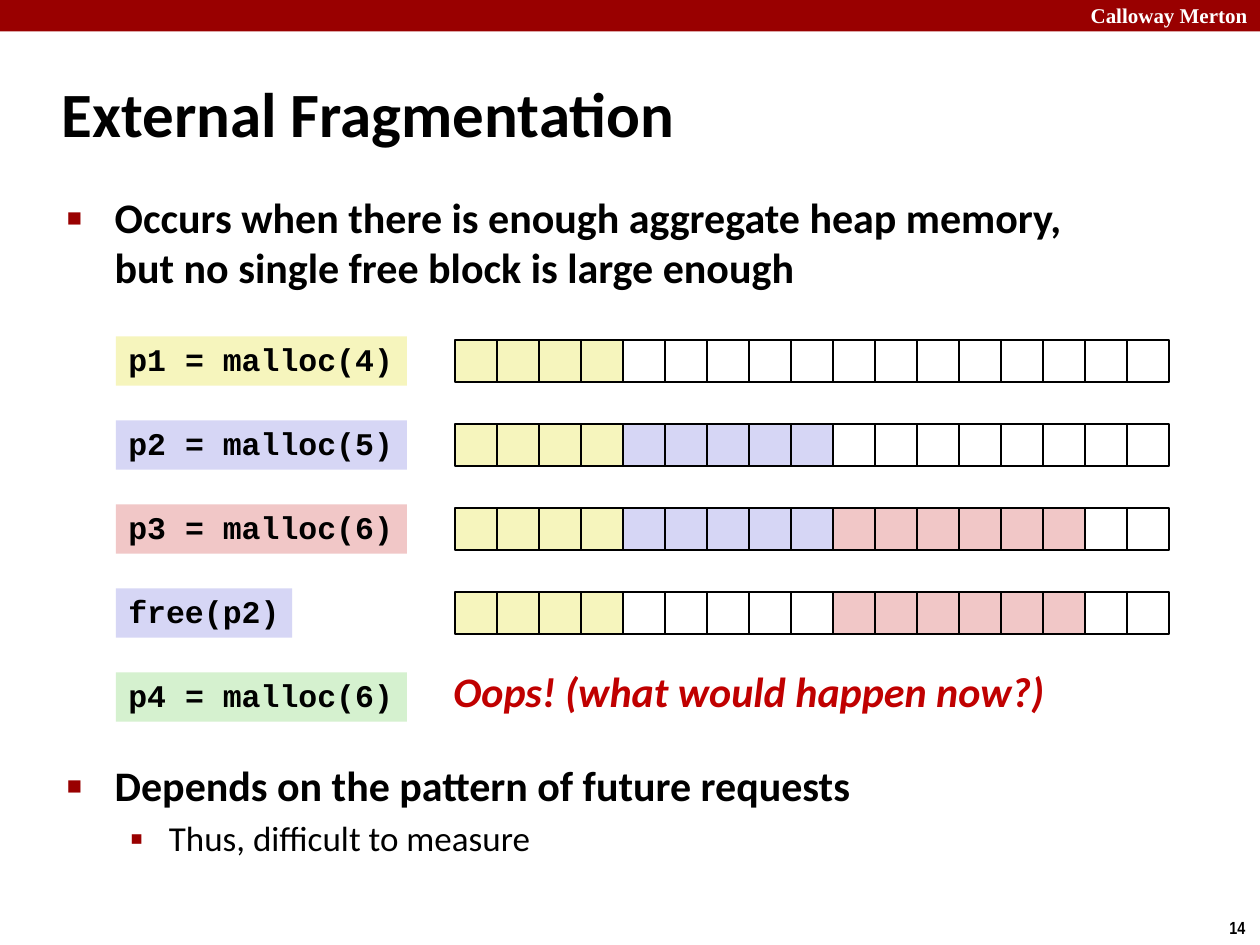
from lxml import etree
from pptx import Presentation
from pptx.dml.color import RGBColor
from pptx.enum.shapes import MSO_SHAPE
from pptx.enum.text import MSO_ANCHOR, MSO_AUTO_SIZE, PP_ALIGN
from pptx.oxml.ns import qn
from pptx.util import Inches, Pt

RECTANGLE = MSO_SHAPE.RECTANGLE
LEFT, RIGHT = PP_ALIGN.LEFT, PP_ALIGN.RIGHT
TOP, MIDDLE = MSO_ANCHOR.TOP, MSO_ANCHOR.MIDDLE
NO_AUTOFIT = MSO_AUTO_SIZE.NONE

BLACK = RGBColor(0x00, 0x00, 0x00)
WHITE = RGBColor(0xFF, 0xFF, 0xFF)
DARK_RED = RGBColor(0x99, 0x00, 0x00)
ALERT_RED = RGBColor(0xC0, 0x00, 0x00)
YELLOW = RGBColor(0xF6, 0xF5, 0xBD)
BLUE = RGBColor(0xD6, 0xD6, 0xF5)
PINK = RGBColor(0xF1, 0xC7, 0xC7)
GREEN = RGBColor(0xD5, 0xF1, 0xCF)


def add_rectangle(shapes, left, top, width, height, fill, outlined=False):
    box = shapes.add_shape(RECTANGLE, Inches(left), Inches(top),
                           Inches(width), Inches(height))
    box.shadow.inherit = False
    box.fill.solid()
    box.fill.fore_color.rgb = fill
    if outlined:
        box.line.color.rgb = BLACK
        box.line.width = Pt(1)
    else:
        box.line.fill.background()
    return box


def add_run(paragraph, text, size, font, color=BLACK, bold=True, italic=False):
    run = paragraph.add_run()
    run.text = text
    run.font.size = Pt(size)
    run.font.name = font
    run.font.color.rgb = color
    run.font.bold = bold
    run.font.italic = italic


prs = Presentation()
prs.slide_width, prs.slide_height = Inches(10), Inches(7.5)
slide = prs.slides.add_slide(prs.slide_layouts[1])

# Header band
add_rectangle(slide.shapes, 0, 0, 10, 0.25, DARK_RED)

# Title
title = slide.shapes.title
title.left, title.top = Inches(0.39), Inches(0.48)
title.width, title.height = Inches(8.3), Inches(0.83)
title.text_frame.auto_size = NO_AUTOFIT
title.text_frame.vertical_anchor = MIDDLE
heading = title.text_frame.paragraphs[0]
heading.alignment = LEFT
add_run(heading, "External Fragmentation", 36, "Calibri")

# Bullets: the second one leaves room above it for the heap diagram
body = slide.placeholders[1]
body.left, body.top = Inches(0.43), Inches(1.49)
body.width, body.height = Inches(8.64), Inches(5.44)
body.text_frame.auto_size = NO_AUTOFIT
body.text_frame.vertical_anchor = TOP
# text, level, size, bold, space before, margin, hanging, bullet, bullet size
bullets = [
    ("Occurs when there is enough aggregate heap memory, "
     "but no single free block is large enough",
     0, 24, True, 0, 0.38, 0.38, "■", 60),
    ("Depends on the pattern of future requests",
     0, 24, True, 268, 0.38, 0.38, "■", 60),
    ("Thus, difficult to measure",
     1, 20, False, 4, 0.81, 0.31, "▪", 110),
]
for i, (text, level, size, bold, before, margin, hanging, mark, percent) in enumerate(bullets):
    frame = body.text_frame
    point = frame.paragraphs[0] if i == 0 else frame.add_paragraph()
    point.level = level
    point.alignment = LEFT
    point.line_spacing = 0.98
    point.space_before = Pt(before)
    add_run(point, text, size, "Calibri", bold=bold)
    props = point._p.get_or_add_pPr()
    props.set("marL", str(Inches(margin)))
    props.set("indent", str(-Inches(hanging)))
    bullet_color = etree.SubElement(props, qn("a:buClr"))
    etree.SubElement(bullet_color, qn("a:srgbClr")).set("val", str(DARK_RED))
    etree.SubElement(props, qn("a:buSzPct")).set("val", str(percent * 1000))
    etree.SubElement(props, qn("a:buChar")).set("char", mark)

# Heap after each request: label, its colour and width, runs of (colour, words)
steps = [
    ("p1 = malloc(4)", YELLOW, 2.31, [(YELLOW, 4), (WHITE, 13)]),
    ("p2 = malloc(5)", BLUE, 2.31, [(YELLOW, 4), (BLUE, 5), (WHITE, 8)]),
    ("p3 = malloc(6)", PINK, 2.31, [(YELLOW, 4), (BLUE, 5), (PINK, 6), (WHITE, 2)]),
    ("free(p2)", BLUE, 1.4, [(YELLOW, 4), (WHITE, 5), (PINK, 6), (WHITE, 2)]),
    ("p4 = malloc(6)", GREEN, 2.31, []),
]
WORD = 1 / 3
for row, (request, color, width, blocks) in enumerate(steps):
    offset = row * 2 * WORD
    words = [fill for fill, count in blocks for _ in range(count)]
    if words:
        heap = slide.shapes.add_group_shape()
        for column, fill in enumerate(words):
            add_rectangle(heap.shapes, 3.61 + column * WORD, 2.7 + offset,
                          WORD, WORD, fill, outlined=True)
    label = add_rectangle(slide.shapes, 0.92, 2.67 + offset, width, 0.39, color)
    label.text_frame.word_wrap = False
    label.text_frame.vertical_anchor = TOP
    code = label.text_frame.paragraphs[0]
    code.alignment = LEFT
    code.line_spacing = 0.94
    add_run(code, request, 18, "Courier New")

# Question, header name and page number
notes = [
    ("Oops! (what would happen now?)", 3.5, 5.23, 4.93, 0.5,
     24, "Calibri", ALERT_RED, True, LEFT),
    ("Calloway Merton", 8.3, -0.03, 1.7, 0.3,
     12, "Times New Roman", WHITE, False, RIGHT),
    ("14", 9.66, 7.23, 0.34, 0.27, 10, "Arial Narrow", BLACK, False, LEFT),
]
for text, left, top, width, height, size, font, color, italic, align in notes:
    note = slide.shapes.add_textbox(Inches(left), Inches(top),
                                    Inches(width), Inches(height))
    note.text_frame.word_wrap = False
    line = note.text_frame.paragraphs[0]
    line.alignment = align
    add_run(line, text, size, font, color, italic=italic)

prs.save("out.pptx")
